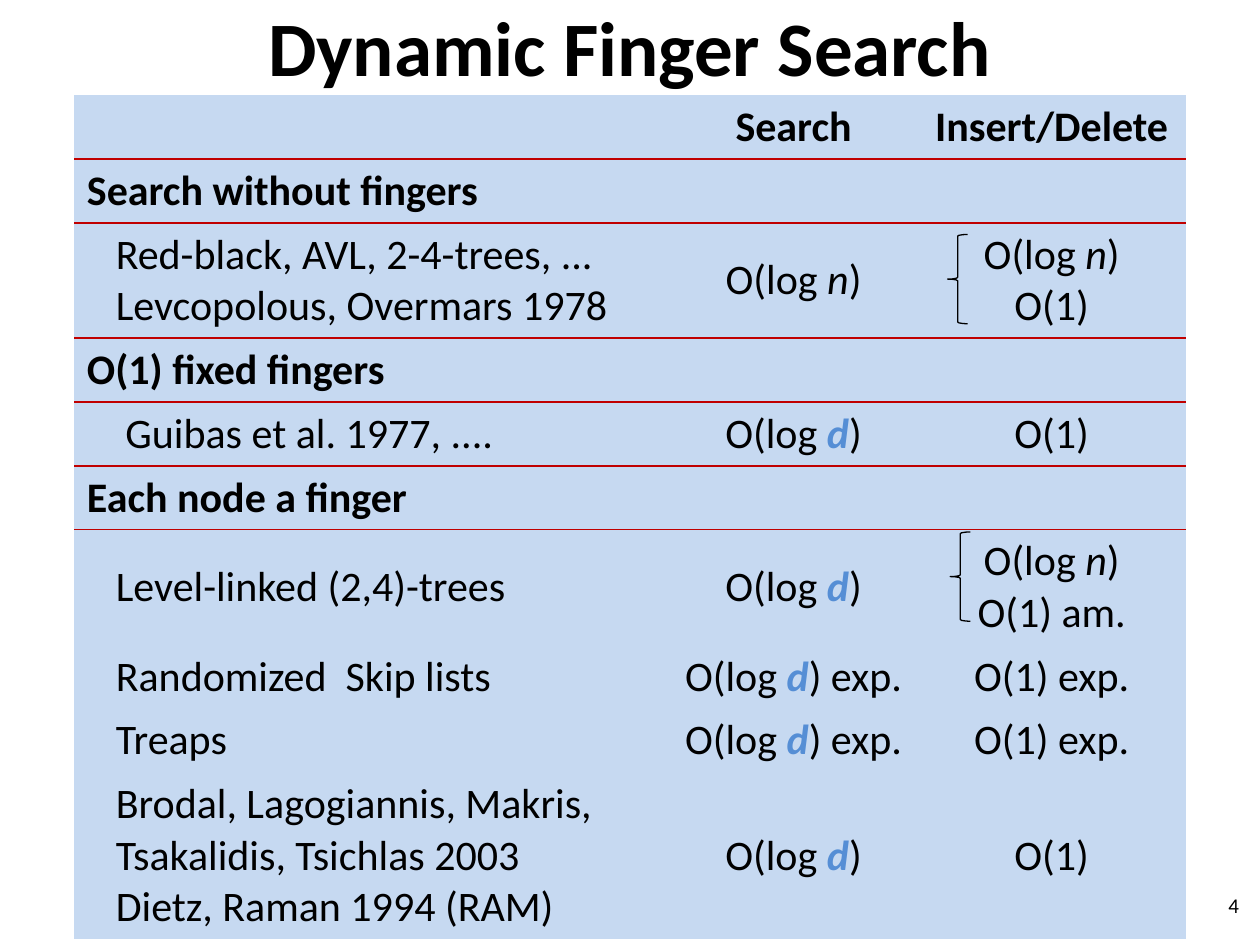
from pptx import Presentation
from pptx.dml.color import RGBColor
from pptx.enum.shapes import MSO_SHAPE
from pptx.enum.text import MSO_ANCHOR, PP_ALIGN
from pptx.oxml import parse_xml
from pptx.oxml.ns import nsdecls, qn
from pptx.util import Pt

BLACK = RGBColor(0x00, 0x00, 0x00)
BLUE = RGBColor(0x55, 0x8E, 0xD5)
PALE = RGBColor(0xC6, 0xD9, 0xF1)
RED = RGBColor(0xC0, 0x00, 0x00)

LEFT, CENTER, RIGHT = PP_ALIGN.LEFT, PP_ALIGN.CENTER, PP_ALIGN.RIGHT
MIDDLE = MSO_ANCHOR.MIDDLE
BRACE = MSO_SHAPE.LEFT_BRACE

# Table style without fill or grid
PLAIN = "{2D5ABB26-0587-4C30-8999-92F81FD0307C}"

# Format of the variables that are marked by asterisks
VARS = {
    "n": {"italic": True},
    "d": {"italic": True, "bold": True, "color": BLUE},
}

# Each row: kind, indent of the first column, cell texts
ROWS = [
    ("head", 0, ["", "Search", "Insert/Delete"]),
    ("group", 0, ["Search without fingers", "", ""]),
    ("item", 16.5, ["Red-black, AVL, 2-4-trees, ...\nLevcopolous, Overmars 1978",
                    "O(log *n*)", "O(log *n*)\nO(1)"]),
    ("group", 0, ["O(1) fixed fingers", "", ""]),
    ("item", 22, ["Guibas et al. 1977, ....", "O(log *d*)", "O(1)"]),
    ("group", 0, ["Each node a finger", "", ""]),
    ("item", 16.5, ["Level-linked (2,4)-trees", "O(log *d*)", "O(log *n*)\nO(1) am."]),
    ("item", 16.5, ["Randomized  Skip lists", "O(log *d*) exp.", "O(1) exp."]),
    ("item", 16.5, ["Treaps", "O(log *d*) exp.", "O(1) exp."]),
    ("item", 16.5, ["Brodal, Lagogiannis, Makris,\nTsakalidis, Tsichlas 2003\n"
                    "Dietz, Raman 1994 (RAM)", "O(log *d*)", "O(1)"]),
]
COLS = [340, 142, 153]
LINE, PAD = 29.3, 7.2


class Deck:
    def __init__(self, wide, high):
        self.prs = Presentation()
        self.prs.slide_width, self.prs.slide_height = Pt(wide), Pt(high)
        self.slide = self.prs.slides.add_slide(self.prs.slide_layouts[5])
        self.base = {"name": "Calibri", "size": Pt(24), "bold": False, "color": BLACK}

    def style(self, font, **form):
        for key, val in {**self.base, **form}.items():
            if key == "color":
                font.color.rgb = val
            else:
                setattr(font, key, val)

    def text(self, frame, words, align=LEFT, indent=0, **form):
        for i, line in enumerate(words.split("\n")):
            par = frame.add_paragraph() if i else frame.paragraphs[0]
            par.alignment = align
            if indent:
                par._p.get_or_add_pPr().set("marL", str(Pt(indent)))
            for j, part in enumerate(line.split("*")):
                run = par.add_run()
                run.text = part
                extra = VARS[part] if j % 2 else {}
                self.style(run.font, **{**form, **extra})

    def place(self, shape, *box):
        for key, val in zip(("left", "top", "width", "height"), box):
            setattr(shape, key, Pt(val))

    def title(self, words, *box):
        shape = self.slide.shapes.title
        self.place(shape, *box)
        shape.text_frame.vertical_anchor = MIDDLE
        self.text(shape.text_frame, words, CENTER, size=Pt(44), bold=True)

    def label(self, words, *box):
        frame = self.slide.shapes.add_textbox(*map(Pt, box)).text_frame
        frame.word_wrap = True
        frame.vertical_anchor = MIDDLE
        self.text(frame, words, RIGHT, size=Pt(12))

    def border(self, cell, side):
        cell._tc.get_or_add_tcPr().insert(0, parse_xml(
            f'<a:{side} {nsdecls("a")} w="{Pt(1)}"><a:solidFill>'
            f'<a:srgbClr val="{RED}"/></a:solidFill></a:{side}>'))

    def table(self, rows, cols, left, top):
        highs = [LINE * max(t.count("\n") + 1 for t in row[2]) + PAD for row in rows]
        table = self.slide.shapes.add_table(
            len(rows), len(cols), Pt(left), Pt(top), Pt(sum(cols)), Pt(sum(highs))).table
        table.first_row = table.horz_banding = False
        table._tbl.tblPr.find(qn("a:tableStyleId")).text = PLAIN
        for col, wide in zip(table.columns, cols):
            col.width = Pt(wide)
        for r, (kind, indent, texts) in enumerate(rows):
            table.rows[r].height = Pt(highs[r])
            for c, words in enumerate(texts):
                cell = table.cell(r, c)
                cell.fill.solid()
                cell.fill.fore_color.rgb = PALE
                cell.vertical_anchor = MIDDLE
                if words:
                    self.text(cell.text_frame, words, CENTER if c else LEFT,
                              0 if c else indent, bold=kind != "item")
                # A red rule runs above each group
                if kind == "group":
                    self.border(cell, "lnT")
                    self.border(table.cell(r - 1, c), "lnB")

    def brace(self, *box):
        shape = self.slide.shapes.add_shape(BRACE, *map(Pt, box))
        shape.shadow.inherit = False
        shape.fill.background()
        shape.line.color.rgb = BLACK
        shape.line.width = Pt(0.75)


def main():
    deck = Deck(720, 540)

    # Title and page number
    deck.title("Dynamic Finger Search", 36, -19, 648, 90)
    deck.label("4", 547, 502.5, 168, 29)

    # Comparison of search structures
    deck.table(ROWS, COLS, 42.5, 54.5)

    # Braces beside the paired bounds
    for left, top in ((543, 304), (541.5, 134)):
        deck.brace(left, top, 11.5, 51)

    deck.prs.save("out.pptx")


if __name__ == "__main__":
    main()
